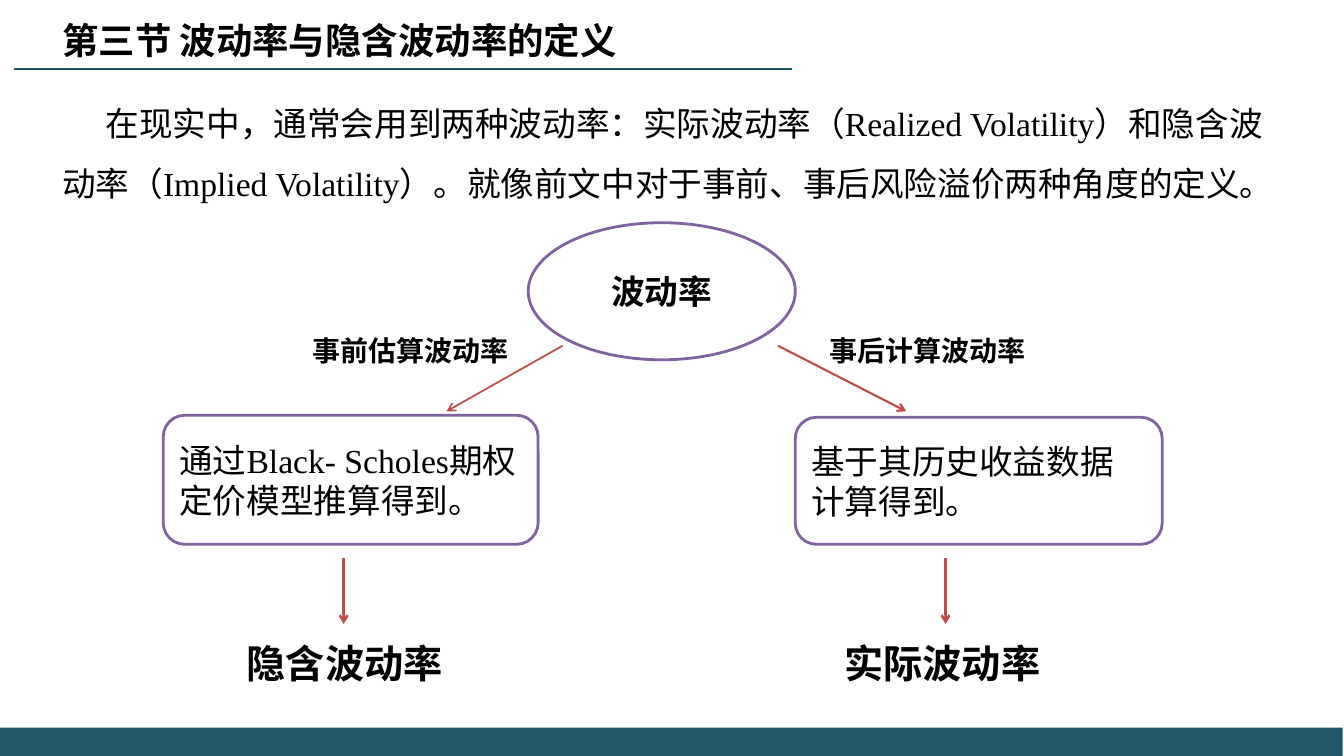
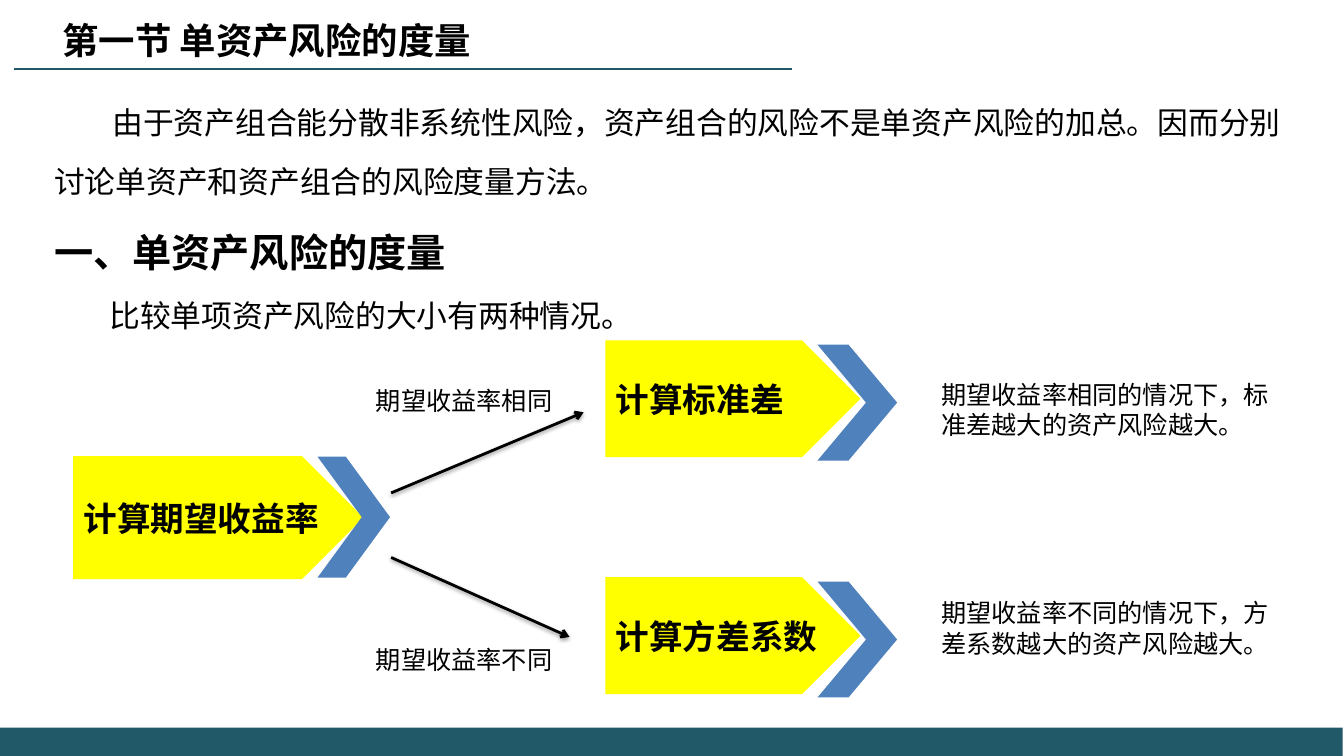
"""Build two slides on volatility and on measuring single-asset risk."""
from typing import NamedTuple, Optional

from lxml import etree
from pptx import Presentation
from pptx.dml.color import RGBColor
from pptx.enum.shapes import MSO_CONNECTOR as CONN, MSO_SHAPE as SHAPE
from pptx.enum.text import MSO_ANCHOR as ANCHOR, PP_ALIGN as ALIGN
from pptx.oxml.ns import qn
from pptx.util import Pt

TEAL = RGBColor(0x21, 0x59, 0x68)
PURPLE = RGBColor(0x80, 0x64, 0xA2)
RED = RGBColor(0xBF, 0x4C, 0x48)
BLUE = RGBColor(0x4F, 0x81, 0xBD)
YELLOW = RGBColor(0xFF, 0xFF, 0x00)
BLACK = RGBColor(0, 0, 0)
WHITE = RGBColor(0xFF, 0xFF, 0xFF)

SANS, SERIF, ARIAL = "Noto Sans CJK SC", "Times New Roman", "Arial"
LEADING = 1.2


class Box(NamedTuple):
    x: float
    y: float
    w: float
    h: float

    def pts(self) -> list:
        return [Pt(v) for v in self]


class Arrow(NamedTuple):
    x1: float
    y1: float
    x2: float
    y2: float
    color: RGBColor
    width: float
    shadow: bool = False


class Step(NamedTuple):
    text: str
    plate: Box
    chevron: Box


class Branch(NamedTuple):
    label: str
    label_box: Box
    method: str
    method_box: Box
    result: str
    result_box: Box


class Case(NamedTuple):
    label: str
    label_y: float
    note: str
    note_y: float


def write(sp, text: str, *, size: float, font: str = SANS, bold: bool = False,
          align=ALIGN.LEFT, spacing: float = 1, indent: float = 0, new: bool = False) -> None:
    tf = sp.text_frame
    tf.word_wrap = True
    p = tf.add_paragraph() if new else tf.paragraphs[0]
    p.alignment = align
    p.line_spacing = Pt(round(size * LEADING * spacing, 1))
    if indent:
        p._p.get_or_add_pPr().set("indent", str(Pt(indent)))
    r = p.add_run()
    r.text = text
    r.font.size, r.font.bold, r.font.name = Pt(size), bold, font
    r.font.color.rgb = BLACK
    etree.SubElement(r._r.get_or_add_rPr(), qn("a:ea"), typeface=SANS)


def add_text(s, box: Box, text: str, **fmt):
    sp = s.shapes.add_textbox(*box.pts())
    write(sp, text, **fmt)
    return sp


def paint(sp, fill: RGBColor, line: Optional[RGBColor] = None, width: float = 1) -> None:
    sp.shadow.inherit = False
    sp.fill.solid()
    sp.fill.fore_color.rgb = fill
    if line is None:
        sp.line.fill.background()
    else:
        sp.line.color.rgb = line
        sp.line.width = Pt(width)


def add_shape(shapes, kind, box: Box, fill: RGBColor, line: Optional[RGBColor] = None,
              width: float = 1):
    sp = shapes.add_shape(kind, *box.pts())
    paint(sp, fill, line, width)
    sp.text_frame.vertical_anchor = ANCHOR.MIDDLE
    return sp


def add_line(s, a: Arrow, head: bool = True) -> None:
    c = s.shapes.add_connector(CONN.STRAIGHT, Pt(a.x1), Pt(a.y1), Pt(a.x2), Pt(a.y2))
    c.line.color.rgb = a.color
    c.line.width = Pt(a.width)
    if head:
        etree.SubElement(c.line._get_or_add_ln(), qn("a:tailEnd"), type="arrow")
    effects = etree.SubElement(c._element.spPr, qn("a:effectLst"))
    if a.shadow:
        shadow = etree.SubElement(effects, qn("a:outerShdw"), blurRad=str(Pt(3.1)),
                                  dist=str(Pt(1.6)), dir="5400000", rotWithShape="0")
        clr = etree.SubElement(shadow, qn("a:srgbClr"), val=str(BLACK))
        etree.SubElement(clr, qn("a:alpha"), val="38000")


def add_step(s, step: Step) -> None:
    shapes = s.shapes.add_group_shape().shapes
    plate = add_shape(shapes, SHAPE.PENTAGON, step.plate, YELLOW, YELLOW, 0.75)
    plate.adjustments[0] = 0.5
    write(plate, step.text, size=24, bold=True)
    x, y, w, h = step.chevron
    outline = [(0, 0), (0.39, 0), (1, 0.5), (0.39, 1), (0, 1), (0.61, 0.5)]
    points = [(Pt(x + fx * w), Pt(y + fy * h)) for fx, fy in outline]
    builder = shapes.build_freeform(*points[0])
    builder.add_line_segments(points[1:], close=True)
    paint(builder.convert_to_shape(), BLUE)


def new_slide(prs, title: str):
    s = prs.slides.add_slide(prs.slide_layouts[6])
    add_shape(s.shapes, SHAPE.RECTANGLE, Box(0, 519.8, 959, 20.2), TEAL)
    add_line(s, Arrow(565.9, 49, 10.1, 49, TEAL, 1.5), head=False)
    add_text(s, Box(37.4, 9.4, 450, 39), title, size=26, bold=True)
    return s


def volatility_slide(prs) -> None:
    s = new_slide(prs, "第三节 波动率与隐含波动率的定义")
    add_text(s, Box(37.4, 55.4, 884.2, 140),
             "在现实中，通常会用到两种波动率：实际波动率（Realized Volatility）和隐含波动率"
             "（Implied Volatility）。就像前文中对于事前、事后风险溢价两种角度的定义。",
             size=24, font=SERIF, spacing=1.5, indent=31)
    root = add_shape(s.shapes, SHAPE.OVAL, Box(377.3, 159.1, 190.8, 97.9), WHITE, PURPLE, 2)
    write(root, "波动率", size=24, font=SERIF, bold=True, align=ALIGN.CENTER)
    branches = [
        Branch("事前估算波动率", Box(216, 234.7, 288, 31.7),
               "通过Black- Scholes期权定价模型推算得到。", Box(116.6, 296.6, 267.8, 92.2),
               "隐含波动率", Box(169.2, 452.9, 239, 41)),
        Branch("事后计算波动率", Box(585.4, 234.7, 300, 31.7),
               "基于其历史收益数据计算得到。", Box(568.1, 298.1, 262.1, 90.7),
               "实际波动率", Box(596.2, 452.9, 278.6, 41)),
    ]
    for b in branches:
        add_text(s, b.label_box, b.label, size=20, bold=True)
        sp = add_shape(s.shapes, SHAPE.ROUNDED_RECTANGLE, b.method_box, WHITE, PURPLE, 2)
        write(sp, b.method, size=24, font=SERIF)
        add_text(s, b.result_box, b.result, size=28, bold=True)
    for a in (Arrow(401.8, 247, 319, 293.8, RED, 1.25),
              Arrow(555.8, 247, 647.3, 293.8, RED, 1.5),
              Arrow(245.5, 398.9, 245.5, 445.7, RED, 1.75),
              Arrow(675.4, 398.9, 675.4, 445.7, RED, 1.75)):
        add_line(s, a)


def risk_slide(prs) -> None:
    s = new_slide(prs, "第一节 单资产风险的度量")
    body = add_text(s, Box(31.7, 54.7, 904.3, 190),
                    "由于资产组合能分散非系统性风险，资产组合的风险不是单资产风险的加总。"
                    "因而分别讨论单资产和资产组合的风险度量方法。",
                    size=22, font=SERIF, spacing=1.6, indent=41.5)
    write(body, "一、单资产风险的度量", size=28, font=SERIF, bold=True, spacing=1.6, new=True)
    write(body, "比较单项资产风险的大小有两种情况。", size=22, font=SERIF, spacing=1.6,
          indent=39.5, new=True)
    for step in (
        Step("计算期望收益率", Box(52.6, 326.2, 206.6, 87.1), Box(226.8, 326.2, 51.8, 86.4)),
        Step("计算标准差", Box(432.7, 243.4, 181.4, 82.8), Box(583.9, 246.2, 56.9, 82.8)),
        Step("计算方差系数", Box(432.7, 412.6, 181.4, 82.8), Box(583.9, 415.4, 56.9, 82.8)),
    ):
        add_step(s, step)
    add_line(s, Arrow(279.4, 352.1, 416.9, 294.5, BLACK, 2, True))
    add_line(s, Arrow(279.4, 398.2, 406.8, 455, BLACK, 2, True))
    for c in (
        Case("期望收益率相同", 271.4, "期望收益率相同的情况下，标准差越大的资产风险越大。", 267.1),
        Case("期望收益率不同", 456.5, "期望收益率不同的情况下，方差系数越大的资产风险越大。", 423.4),
    ):
        add_text(s, Box(261.4, c.label_y, 154.8, 28.8), c.label, size=18, font=ARIAL)
        add_text(s, Box(665.3, c.note_y, 251.3, 51.1), c.note, size=18, font=ARIAL)


def main() -> None:
    prs = Presentation()
    prs.slide_width, prs.slide_height = Pt(960), Pt(540)
    volatility_slide(prs)
    risk_slide(prs)
    prs.save("out.pptx")


if __name__ == "__main__":
    main()
